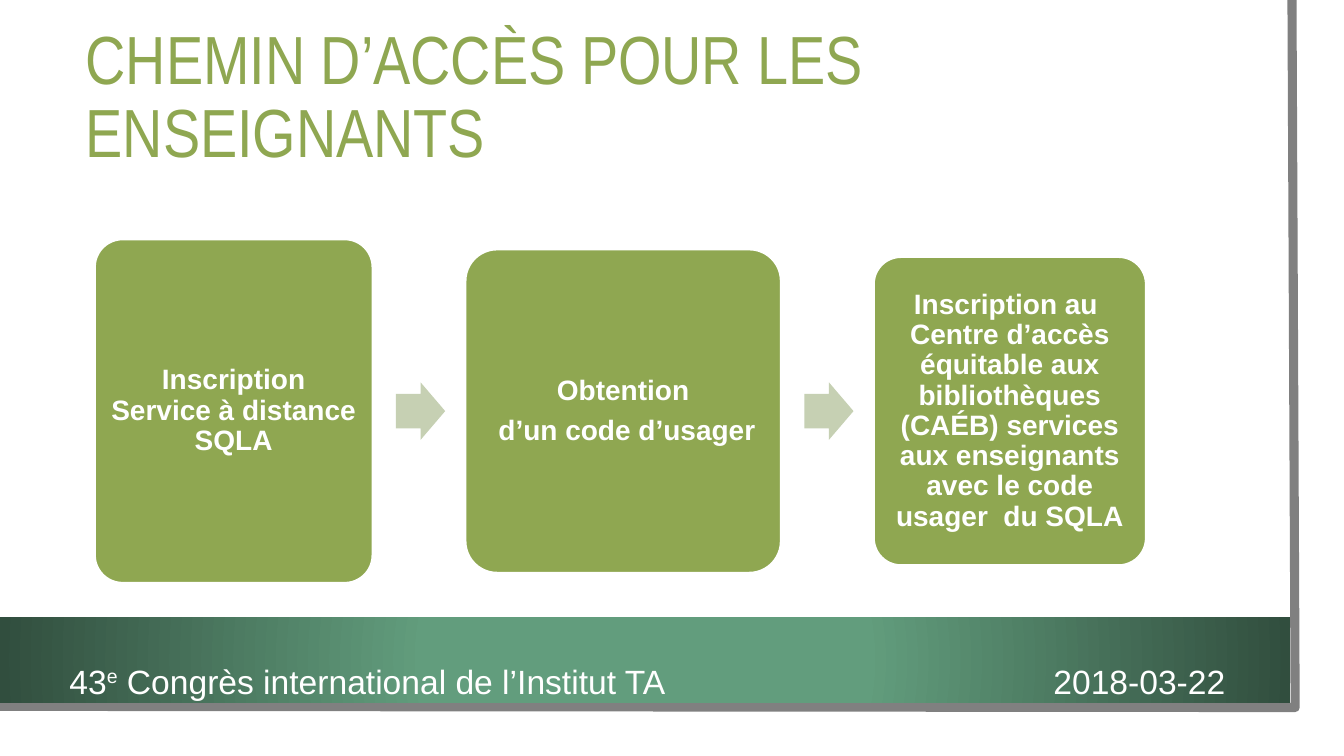
import pptx
import pptx.dml.color
import pptx.enum.shapes
import pptx.enum.text
import pptx.oxml
import pptx.oxml.ns
import pptx.util
from dataclasses import dataclass

Cm = pptx.util.Cm
Pt = pptx.util.Pt
RGB = pptx.dml.color.RGBColor.from_string
SHAPE = pptx.enum.shapes.MSO_SHAPE
ALIGN = pptx.enum.text.PP_ALIGN
MIDDLE = pptx.enum.text.MSO_ANCHOR.MIDDLE
NS = pptx.oxml.ns.nsdecls("a")


@dataclass
class Theme:
    green: str = "8FA751"
    pale: str = "C6D0B3"
    band_light: str = "629D7D"
    band_dark: str = "314E3E"
    edge: str = "808080"
    white: str = "FFFFFF"
    heading_font: str = "Arial Narrow"
    body_font: str = "Arial"
    heading_pt: float = 48.6
    footer_pt: float = 24
    card_pt: float = 20


theme = Theme()


def add_block(s, kind, left, top, width, height, color):
    sp = s.shapes.add_shape(kind, Cm(left), Cm(top), Cm(width), Cm(height))
    sp.shadow.inherit = False
    sp.fill.solid()
    sp.fill.fore_color.rgb = RGB(color)
    sp.line.fill.background()
    return sp


def set_font(p, name, size, color, bold=False):
    p.font.name = name
    p.font.size = Pt(size)
    p.font.color.rgb = RGB(color)
    p.font.bold = bold


prs = pptx.Presentation()
prs.slide_width = Cm(33.87)
prs.slide_height = Cm(19.05)
s = prs.slides.add_slide(prs.slide_layouts[6])

fb = s.shapes.build_freeform(Cm(32.56), Cm(0))
fb.add_line_segments([(Cm(32.64), Cm(17.83)), (Cm(-0.08), Cm(17.8))], close=False)
edge = fb.convert_to_shape()
edge.shadow.inherit = False
edge.fill.background()
edge.line.color.rgb = RGB(theme.edge)
edge.line.width = Pt(6.5)

band = add_block(s, SHAPE.RECTANGLE, 0, 15.55, 32.51, 2.16, theme.band_light)
band.fill.gradient()
stops = [(0.34, theme.band_light), (1, theme.band_dark)]
for stop, (position, color) in zip(band.fill.gradient_stops, stops):
    stop.position = position
    stop.color.rgb = RGB(color)
lin = band._element.spPr.find(".//" + pptx.oxml.ns.qn("a:lin"))
lin.getparent().replace(lin, pptx.oxml.parse_xml(
    f'<a:path {NS} path="circle">'
    '<a:fillToRect l="50000" t="50000" r="50000" b="50000"/></a:path>'))

title = s.shapes.add_textbox(Cm(1.91), Cm(0.89), Cm(28.88), Cm(3.2))
tf = title.text_frame
tf.word_wrap = True
tf.vertical_anchor = MIDDLE
p = tf.paragraphs[0]
p.text = "CHEMIN D’ACCÈS POUR LES ENSEIGNANTS"
p.line_spacing = 0.9
set_font(p, theme.heading_font, theme.heading_pt, theme.green)

cards = [
    (7.0, 8.66, ["Inscription Service à distance SQLA"]),
    (7.95, 8.15, ["Obtention", " d’un code d’usager"]),
    (6.86, 7.77, ["Inscription au  Centre d’accès équitable aux bibliothèques "
                  "(CAÉB) services aux enseignants avec le code usager  du SQLA"]),
]
left, middle, gap = 2.39, 10.36, 2.34
arrow_width, arrow_height, arrow_offset = 1.24, 1.45, 0.59

for i, (width, height, lines) in enumerate(cards):
    if i:
        arrow = add_block(s, SHAPE.RIGHT_ARROW, left - gap + arrow_offset,
                          middle - arrow_height / 2, arrow_width, arrow_height, theme.pale)
        arrow.adjustments[0] = 0.6
    card = add_block(s, SHAPE.ROUNDED_RECTANGLE, left, middle - height / 2,
                     width, height, theme.green)
    card.adjustments[0] = 0.1
    card.line.color.rgb = RGB(theme.white)
    card.line.width = Pt(1.5)
    tf = card.text_frame
    tf.word_wrap = True
    tf.vertical_anchor = MIDDLE
    tf.margin_left = tf.margin_right = tf.margin_top = tf.margin_bottom = Cm(0.2)
    tf.text = "\n".join(lines)
    for p in tf.paragraphs:
        p.alignment = ALIGN.CENTER
        p.line_spacing = 0.9
        p.space_after = Pt(7)
        set_font(p, theme.body_font, theme.card_pt, theme.white, bold=True)
    left += width + gap

footer = s.shapes.add_textbox(Cm(1.5), Cm(16.87), Cm(30.18), Cm(0.56))
tf = footer.text_frame
tf.word_wrap = True
tf.vertical_anchor = MIDDLE
p = tf.paragraphs[0]
p._p.get_or_add_pPr().append(pptx.oxml.parse_xml(
    f'<a:tabLst {NS}><a:tab pos="{Cm(29.13)}" algn="r"/></a:tabLst>'))
set_font(p, theme.body_font, theme.footer_pt, theme.white)
for text, raised in [("43", False), ("e", True),
                     (" Congrès international de l’Institut TA\t2018-03-22", False)]:
    r = p.add_run()
    r.text = text
    if raised:
        r._r.get_or_add_rPr().set("baseline", "30000")

prs.save("out.pptx")
